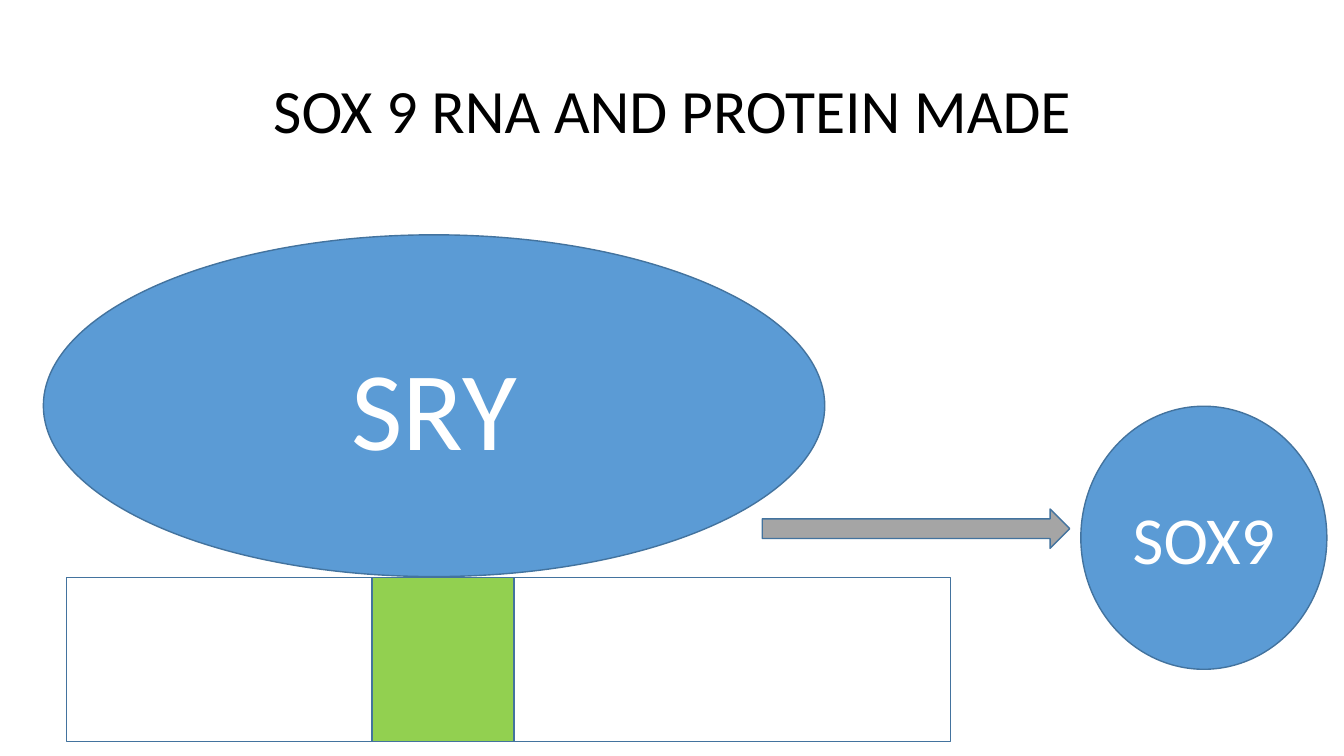
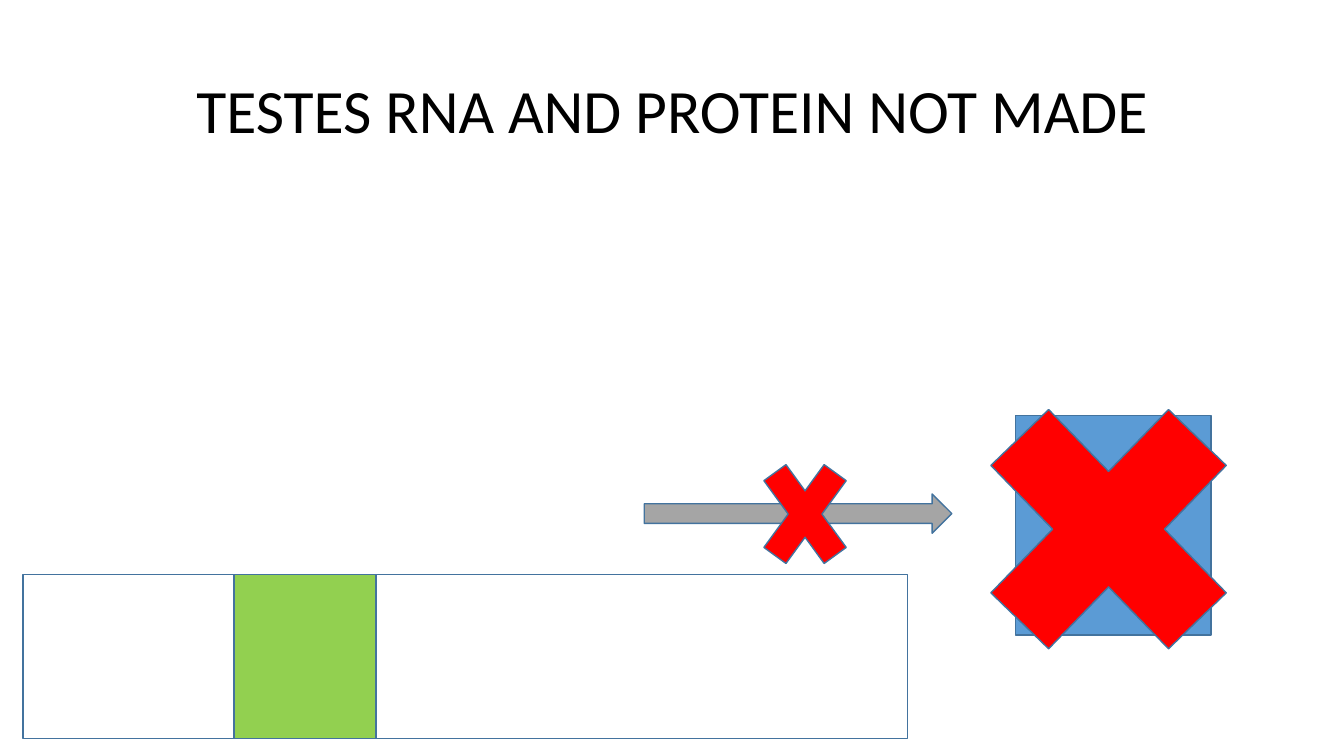
from pptx import Presentation
from pptx.dml.color import RGBColor
from pptx.enum.shapes import MSO_SHAPE
from pptx.enum.text import MSO_ANCHOR, MSO_AUTO_SIZE, PP_ALIGN
from pptx.util import Inches, Pt

FONT = "Calibri"
BLACK, WHITE = "000000", "FFFFFF"
BLUE, OUTLINE = "5B9BD5", "43739E"
GREEN, GRAY, RED = "92D050", "A5A5A5", "FF0000"

GENE_W, GENE_H, SITE_W = 8.77, 1.63, 1.41
ARROW_W, ARROW_H = 3.05, 0.39


def rgb(color):
    return RGBColor.from_string(color)


def set_text(shape, text, size, color):
    tf = shape.text_frame
    tf.text = text
    tf.word_wrap = True
    tf.auto_size = MSO_AUTO_SIZE.NONE
    tf.vertical_anchor = MSO_ANCHOR.MIDDLE
    p = tf.paragraphs[0]
    p.alignment = PP_ALIGN.CENTER
    font = p.runs[0].font
    font.name, font.size = FONT, Pt(size)
    font.color.rgb = rgb(color)


def add_titled_slide(prs, title):
    s = prs.slides.add_slide(prs.slide_layouts[5])
    box = s.shapes.title
    box.left, box.top = Inches(0.92), Inches(0.4)
    box.width, box.height = Inches(11.5), Inches(1.45)
    set_text(box, title, 44, BLACK)
    box.text_frame.paragraphs[0].line_spacing = 0.9
    return s


def add_figure(s, kind, x, y, w, h, fill=None):
    """Add an outlined shape, hollow when no fill is given."""
    sp = s.shapes.add_shape(kind, Inches(x), Inches(y), Inches(w), Inches(h))
    sp.shadow.inherit = False
    if fill:
        sp.fill.solid()
        sp.fill.fore_color.rgb = rgb(fill)
    else:
        sp.fill.background()
    sp.line.color.rgb = rgb(OUTLINE)
    sp.line.width = Pt(1)
    return sp


def add_protein(s, x, y, w, h, name, size):
    sp = add_figure(s, MSO_SHAPE.OVAL, x, y, w, h, BLUE)
    set_text(sp, name, size, WHITE)


def add_gene(s, x, y, site_offset):
    """Draw a gene bar with its green binding site."""
    add_figure(s, MSO_SHAPE.RECTANGLE, x, y, GENE_W, GENE_H)
    add_figure(s, MSO_SHAPE.RECTANGLE, x + site_offset, y, SITE_W, GENE_H, GREEN)


def add_expression_arrow(s, x, y):
    add_figure(s, MSO_SHAPE.RIGHT_ARROW, x, y, ARROW_W, ARROW_H, GRAY)


def add_cross(s, x, y, w, h):
    add_figure(s, MSO_SHAPE.MATH_MULTIPLY, x, y, w, h, RED)


def build_gene_on(prs):
    s = add_titled_slide(prs, "SOX 9 RNA AND PROTEIN MADE")
    add_protein(s, 0.43, 2.33, 7.75, 3.39, "SRY", 80)
    add_gene(s, 0.66, 5.73, site_offset=3.03)
    add_expression_arrow(s, 7.56, 5.05)
    add_protein(s, 10.72, 4.03, 2.44, 2.61, "SOX9", 48)


def build_gene_off(prs):
    s = add_titled_slide(prs, "TESTES RNA AND PROTEIN NOT MADE")
    add_gene(s, 0.23, 5.7, site_offset=2.09)
    add_expression_arrow(s, 6.39, 4.9)
    add_figure(s, MSO_SHAPE.RECTANGLE, 10.07, 4.12, 1.94, 2.18, BLUE)
    add_cross(s, 7.41, 4.31, 1.15, 1.58)
    add_cross(s, 9.3, 3.5, 3.39, 3.5)


def main():
    prs = Presentation()
    prs.slide_width, prs.slide_height = Inches(13.33), Inches(7.5)
    build_gene_on(prs)
    build_gene_off(prs)
    prs.save("out.pptx")


if __name__ == "__main__":
    main()
